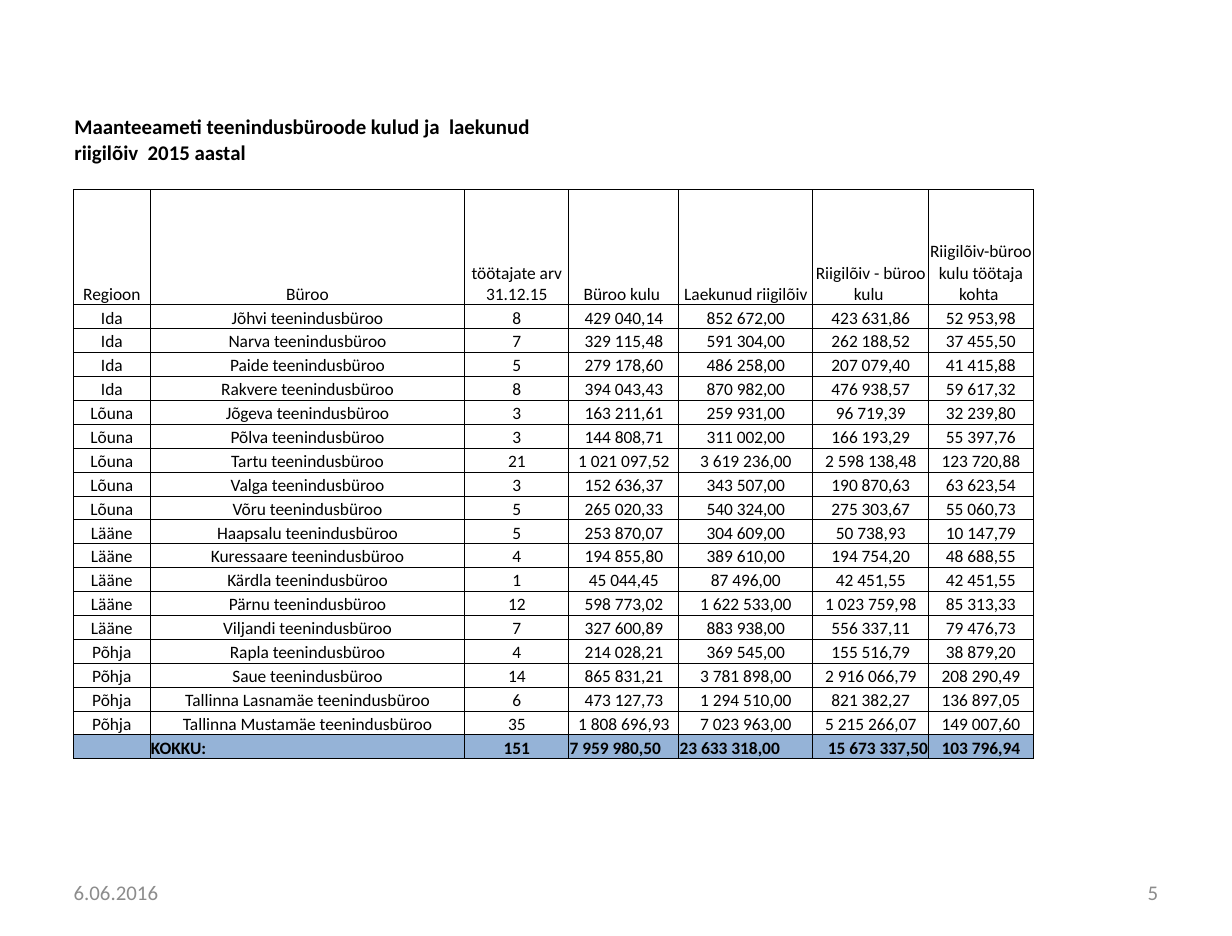
"""Build the slide with costs and collected state fees of the service bureaus in 2015."""
from lxml import etree
from pptx import Presentation
from pptx.dml.color import RGBColor
from pptx.enum.text import MSO_ANCHOR, PP_ALIGN
from pptx.oxml.ns import qn
from pptx.util import Pt

LEFT, CENTER, RIGHT = PP_ALIGN.LEFT, PP_ALIGN.CENTER, PP_ALIGN.RIGHT
BOTTOM, MIDDLE = MSO_ANCHOR.BOTTOM, MSO_ANCHOR.MIDDLE
COLORS = {"text": "000000", "footer": "8C8C8C", "total": "95B3D7"}
NO_STYLE = "{2D5ABB26-0587-4C30-8999-92F81FD0307C}"

TITLE = "Maanteeameti teenindusbüroode kulud ja  laekunud riigilõiv  2015 aastal"
HEADERS = ["Regioon", "Büroo", "töötajate arv 31.12.15", "Büroo kulu ", "Laekunud riigilõiv",
           "Riigilõiv - büroo kulu ", "Riigilõiv-büroo kulu töötaja kohta "]
REGIONS = {
    "Ida": [
        ("Jõhvi", "8", "429 040,14", "852 672,00", "423 631,86", "52 953,98"),
        ("Narva", "7", "329 115,48", "591 304,00", "262 188,52", "37 455,50"),
        ("Paide", "5", "279 178,60", "486 258,00", "207 079,40", "41 415,88"),
        ("Rakvere", "8", "394 043,43", "870 982,00", "476 938,57", "59 617,32"),
    ],
    "Lõuna": [
        ("Jõgeva", "3", "163 211,61", "259 931,00", "96 719,39", "32 239,80"),
        ("Põlva", "3", "144 808,71", "311 002,00", "166 193,29", "55 397,76"),
        ("Tartu", "21", "1 021 097,52", "3 619 236,00", "2 598 138,48", "123 720,88"),
        ("Valga", "3", "152 636,37", "343 507,00", "190 870,63", "63 623,54"),
        ("Võru", "5", "265 020,33", "540 324,00", "275 303,67", "55 060,73"),
    ],
    "Lääne": [
        ("Haapsalu", "5", "253 870,07", "304 609,00", "50 738,93", "10 147,79"),
        ("Kuressaare", "4", "194 855,80", "389 610,00", "194 754,20", "48 688,55"),
        ("Kärdla", "1", "45 044,45", "87 496,00", "42 451,55", "42 451,55"),
        ("Pärnu", "12", "598 773,02", "1 622 533,00", "1 023 759,98", "85 313,33"),
        ("Viljandi", "7", "327 600,89", "883 938,00", "556 337,11", "79 476,73"),
    ],
    "Põhja": [
        ("Rapla", "4", "214 028,21", "369 545,00", "155 516,79", "38 879,20"),
        ("Saue", "14", "865 831,21", "3 781 898,00", "2 916 066,79", "208 290,49"),
        ("Tallinna Lasnamäe", "6", "473 127,73", "1 294 510,00", "821 382,27", "136 897,05"),
        ("Tallinna Mustamäe", "35", "1 808 696,93", "7 023 963,00", "5 215 266,07", "149 007,60"),
    ],
}
TOTAL = ["", "KOKKU:", "151", "7 959 980,50", "23 633 318,00", "15 673 337,50", "103 796,94"]
TOTAL_ALIGN = [LEFT, LEFT, CENTER, LEFT, LEFT, RIGHT, CENTER]
COLUMN_WIDTHS = [44, 181, 59.8, 63.3, 77, 66.7, 60]
TITLE_HEIGHT, HEADER_HEIGHT, ROW_HEIGHT = 29.9, 66.2, 13.77


def write(paragraph, text, size, color, align=LEFT, bold=False):
    """Add one formatted run, or size the empty paragraph."""
    paragraph.alignment = align
    if not text:
        etree.SubElement(paragraph._p, qn("a:endParaRPr"), sz=str(size * 100))
        return
    run = paragraph.add_run()
    run.text = text
    run.font.name, run.font.size, run.font.bold = "Calibri", Pt(size), bold
    run.font.color.rgb = RGBColor.from_string(COLORS[color])


def add_border(cell, sides):
    """Draw thin lines on the given sides of a cell."""
    for side in sides:
        line = etree.SubElement(cell._tc.get_or_add_tcPr(), qn(f"a:ln{side}"), w=str(Pt(0.5)))
        fill = etree.SubElement(line, qn("a:solidFill"))
        etree.SubElement(fill, qn("a:srgbClr"), val=COLORS["text"])


prs = Presentation()
prs.slide_width, prs.slide_height = Pt(708.5), Pt(538.5)
slide = prs.slides.add_slide(prs.slide_layouts[6])

for left, text, align in [(35.3, "6.06.2016", LEFT), (507.6, "5", RIGHT)]:
    footer = slide.shapes.add_textbox(Pt(left), Pt(499), Pt(165.6), Pt(28.8)).text_frame
    footer.word_wrap = True
    footer.vertical_anchor = MIDDLE
    write(footer.paragraphs[0], text, 12, "footer", align)

bureaus = [[region, f"{town} teenindusbüroo", *values]
           for region, offices in REGIONS.items() for town, *values in offices]
blank = [""] * len(HEADERS)
rows = [[TITLE, *blank[1:]], blank, HEADERS, *bureaus, TOTAL]
title_row, spacer_row, header_row, total_row = 0, 1, 2, len(rows) - 1
row_heights = [ROW_HEIGHT] * len(rows)
row_heights[title_row], row_heights[header_row] = TITLE_HEIGHT, HEADER_HEIGHT

costs = slide.shapes.add_table(len(rows), len(HEADERS), Pt(42.3), Pt(65.5),
                               Pt(sum(COLUMN_WIDTHS)), Pt(sum(row_heights))).table
costs.first_row = costs.horz_banding = False
costs._tbl.tblPr.find(qn("a:tableStyleId")).text = NO_STYLE
for column, width in zip(costs.columns, COLUMN_WIDTHS):
    column.width = Pt(width)
for row, height in zip(costs.rows, row_heights):
    row.height = Pt(height)
costs.cell(title_row, 0).merge(costs.cell(title_row, 2))

for r, values in enumerate(rows):
    for c, value in enumerate(values):
        cell = costs.cell(r, c)
        cell.vertical_anchor = BOTTOM
        cell.margin_left = cell.margin_right = cell.margin_top = Pt(0.5)
        cell.margin_bottom = 0
        if r == spacer_row:
            add_border(cell, "B")
        elif r >= header_row:
            add_border(cell, "LRTB")
        if r == total_row:
            cell.fill.solid()
            cell.fill.fore_color.rgb = RGBColor.from_string(COLORS["total"])
            align = TOTAL_ALIGN[c]
        else:
            cell.fill.background()
            align = LEFT if r == title_row else CENTER
        write(cell.text_frame.paragraphs[0], value, 12 if r == title_row else 10, "text",
              align, r in (title_row, total_row))

prs.save("out.pptx")
